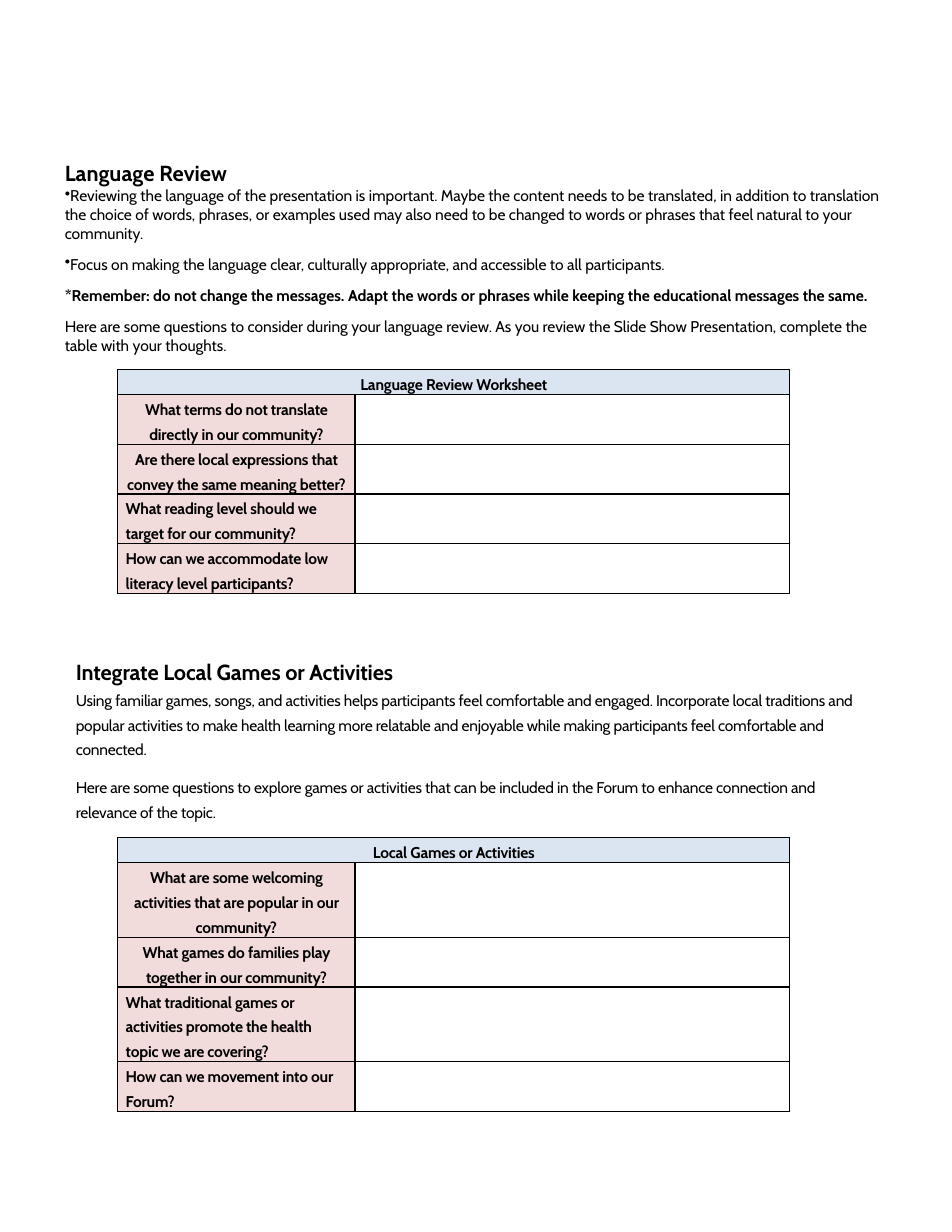
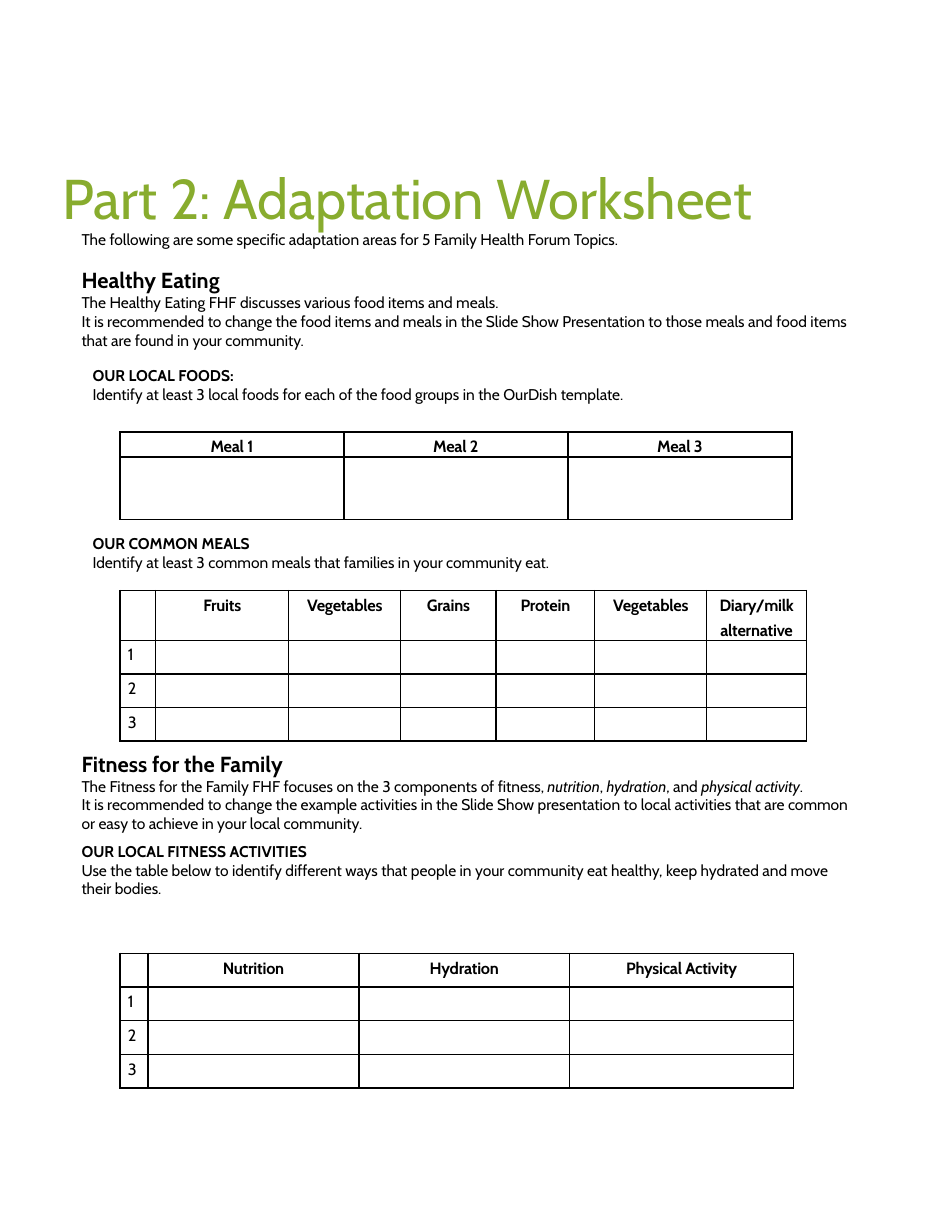
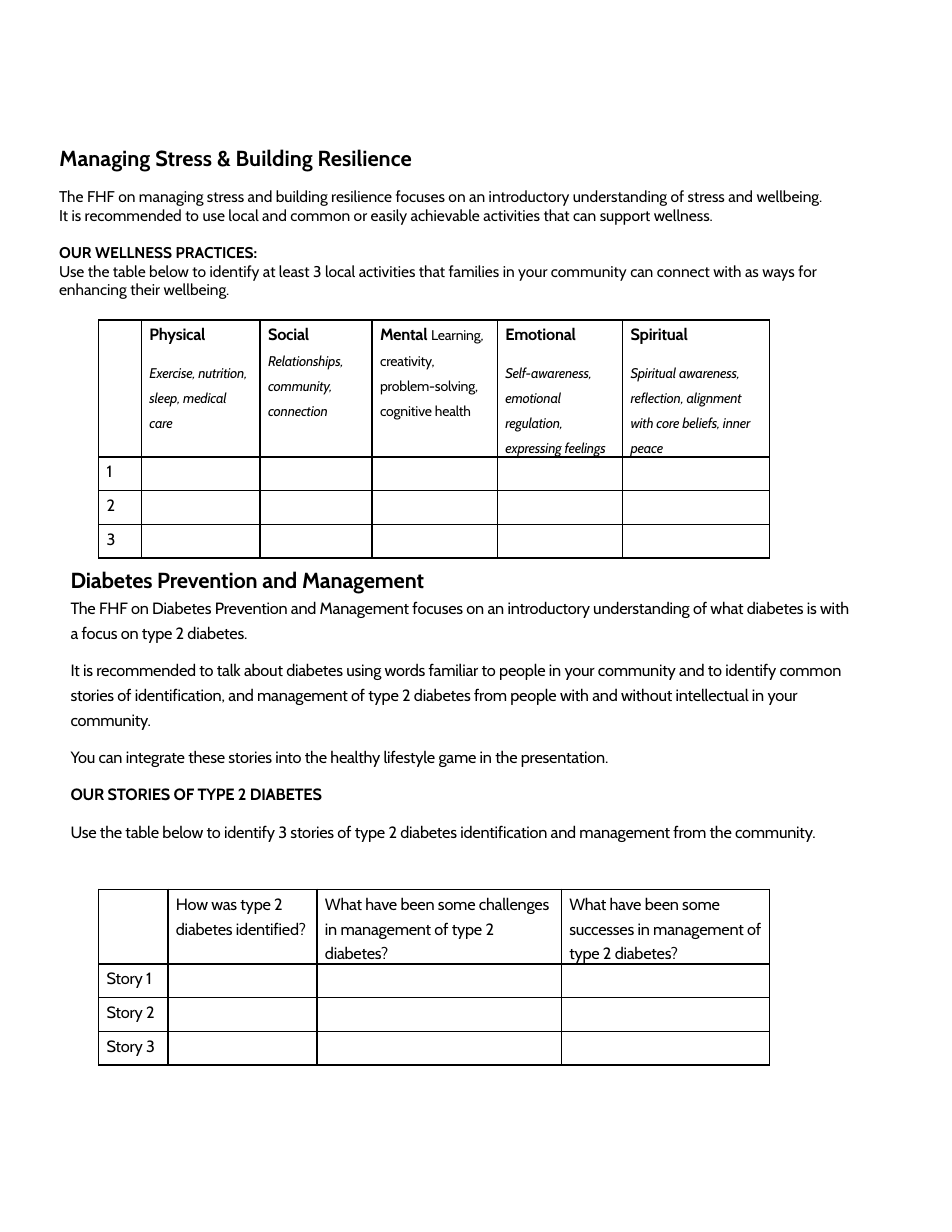
from dataclasses import dataclass

from lxml import etree
from pptx import Presentation
from pptx.dml.color import RGBColor
from pptx.enum.text import MSO_ANCHOR, PP_ALIGN
from pptx.oxml.ns import qn
from pptx.util import Cm, Pt

# Shared look
FONT = "Cabin"
BLACK = RGBColor(0x00, 0x00, 0x00)
GREEN = RGBColor(0x88, 0xAC, 0x2E)
BLUE = RGBColor(0xDB, 0xE5, 0xF1)
PINK = RGBColor(0xF2, 0xDB, 0xDB)
LEFT, CENTER = PP_ALIGN.LEFT, PP_ALIGN.CENTER
TOP, BOTTOM = MSO_ANCHOR.TOP, MSO_ANCHOR.BOTTOM
LINE = Pt(16)
TIGHT = -10  # letter spacing, hundredths of a point
CELL_MARGIN = Cm(0.18)


@dataclass
class Para:
    """Text is a string or a list of (text, style, size); style holds b and i."""
    text: object
    size: float = 10
    style: str = ""
    before: float = 0
    after: float = 0
    align: object = LEFT
    bullet: bool = False
    color: RGBColor = BLACK


def heading(text, before=0):
    return Para(text, 14, "b", before)


# Text
def add_run(p, text, style, size, color, spacing):
    r = p.add_run()
    r.text = text
    font = r.font
    font.name, font.size = FONT, Pt(size)
    font.bold, font.italic = "b" in style, "i" in style
    font.color.rgb = color
    if spacing:
        r._r.get_or_add_rPr().set("spc", str(spacing))


def fill_text(tf, paras, line=None, spacing=0):
    for i, para in enumerate(paras):
        p = tf.add_paragraph() if i else tf.paragraphs[0]
        p.alignment = para.align
        if line:
            p.line_spacing = line
        p.space_before, p.space_after = Pt(para.before), Pt(para.after)
        if para.bullet:
            pPr = p._p.get_or_add_pPr()
            pPr.set("marL", "0")
            pPr.set("indent", "0")
            etree.SubElement(pPr, qn("a:buChar")).set("char", "•")
        runs = para.text
        if isinstance(runs, str):
            runs = [(runs, para.style, para.size)]
        for text, style, size in runs:
            add_run(p, text, style, size, para.color, spacing)


def add_text(s, box, paras, inset=(0.25, 0.13), anchor=TOP, line=None, spacing=0):
    sp = s.shapes.add_textbox(*(Cm(v) for v in box))
    tf = sp.text_frame
    tf.word_wrap = True
    tf.vertical_anchor = anchor
    tf.margin_left = tf.margin_right = Cm(inset[0])
    tf.margin_top = Cm(inset[1])
    tf.margin_bottom = Cm(0.13)
    fill_text(tf, paras, line, spacing)


# Tables
def add_borders(cell):
    tcPr = cell._tc.get_or_add_tcPr()
    for i, side in enumerate(("a:lnL", "a:lnR", "a:lnT", "a:lnB")):
        ln = etree.Element(qn(side), w=str(Pt(1)))
        fill = etree.SubElement(ln, qn("a:solidFill"))
        etree.SubElement(fill, qn("a:srgbClr")).set("val", str(BLACK))
        tcPr.insert(i, ln)


def add_grid(s, left, top, widths, line_counts, rows):
    """Row heights count text lines; cells missing from a row stay empty."""
    heights = [int(LINE * n) for n in line_counts]
    frame = s.shapes.add_table(len(rows), len(widths), Cm(left), Cm(top),
                               Cm(sum(widths)), sum(heights))
    table = frame.table
    table.first_row = table.horz_banding = False
    for column, width in zip(table.columns, widths):
        column.width = Cm(width)
    for i, (row, height) in enumerate(zip(rows, heights)):
        table.rows[i].height = height
        for j in range(len(widths)):
            cell = table.cell(i, j)
            cell.margin_left = cell.margin_right = CELL_MARGIN
            cell.margin_top = cell.margin_bottom = 0
            cell.fill.background()
            add_borders(cell)
            cell.text_frame.paragraphs[0].line_spacing = LINE
            if j < len(row):
                fill_text(cell.text_frame, row[j], LINE, TIGHT)
    return table


def add_worksheet(s, top, title, questions):
    """A blue title row over pink questions with room for answers."""
    rows = [[[Para(title, style="b", align=CENTER)]]]
    rows += [[[Para(text, style="b", align=align)]] for text, _, align in questions]
    counts = [1] + [lines for _, lines, _ in questions]
    table = add_grid(s, 2.67, top, [5.38, 9.86], counts, rows)
    table.cell(0, 0).merge(table.cell(0, 1))
    for i in range(len(rows)):
        fill = table.cell(i, 0).fill
        fill.solid()
        fill.fore_color.rgb = PINK if i else BLUE


def header_cells(labels, style="b", align=CENTER):
    return [[]] + [[Para(label, 10.5, style, align=align)] for label in labels]


def numbered_rows(prefix=""):
    return [[[Para(f"{prefix}{n}", 10.5)]] for n in (1, 2, 3)]


# Slides
def language_slide(s):
    add_text(s, (1.47, 3.05, 18.64, 6.58), [
        heading("Language Review"),
        Para("Reviewing the language of the presentation is important. Maybe the content needs "
             "to be translated, in addition to translation the choice of words, phrases, or "
             "examples used may also need to be changed to words or phrases that feel natural "
             "to your community.", after=8, bullet=True),
        Para("Focus on making the language clear, culturally appropriate, and accessible to "
             "all participants.", after=8, bullet=True),
        Para("*Remember: do not change the messages. Adapt the words or phrases while keeping "
             "the educational messages the same.", style="b", after=8),
        Para("Here are some questions to consider during your language review. As you review "
             "the Slide Show Presentation, complete the table with your thoughts."),
    ], inset=(0, 0.58))
    add_worksheet(s, 8.38, "Language Review Worksheet", [
        ("What terms do not translate directly in our community?", 2, CENTER),
        ("Are there local expressions that convey the same meaning better?", 2, CENTER),
        ("What reading level should we target for our community?", 2, LEFT),
        ("How can we accommodate low literacy level participants?", 2, LEFT),
    ])
    add_text(s, (1.47, 14.83, 18.54, 3.89), [
        heading("Integrate Local Games or Activities"),
        Para("Using familiar games, songs, and activities helps participants feel comfortable "
             "and engaged. Incorporate local traditions and popular activities to make health "
             "learning more relatable and enjoyable while making participants feel comfortable "
             "and connected.", after=8),
        Para("Here are some questions to explore games or activities that can be included in "
             "the Forum to enhance connection and relevance of the topic."),
    ], line=LINE, spacing=TIGHT)
    add_worksheet(s, 19, "Local Games or Activities", [
        ("What are some welcoming activities that are popular in our community?", 3, CENTER),
        ("What games do families play together in our community?", 2, CENTER),
        ("What traditional games or activities promote the health topic we are covering?",
         3, LEFT),
        ("How can we movement into our Forum?", 2, LEFT),
    ])


def adaptation_slide(s):
    add_text(s, (1.17, 3.48, 18.34, 1.91),
             [Para("Part 2: Adaptation Worksheet", 36, color=GREEN)],
             anchor=BOTTOM, line=0.9)

    # Healthy eating
    add_text(s, (1.85, 4.85, 17.65, 3.86), [
        Para("The following are some specific adaptation areas for 5 Family Health Forum "
             "Topics."),
        heading("Healthy Eating", before=12),
        Para("The Healthy Eating FHF discusses various food items and meals."),
        Para("It is recommended to change the food items and meals in the Slide Show "
             "Presentation to those meals and food items that are found in your community."),
    ], inset=(0, 0.36))
    add_text(s, (1.85, 8.18, 17.65, 4.95), [
        Para("OUR LOCAL FOODS:", style="b"),
        Para("Identify at least 3 local foods for each of the food groups in the OurDish "
             "template."),
        Para("OUR COMMON MEALS", style="b", before=84),
        Para("Identify at least 3 common meals that families in your community eat."),
    ])
    meals = header_cells(["Meal 1", "Meal 2", "Meal 3"])[1:]
    add_grid(s, 2.72, 9.8, [5.08] * 3, [1, 2.5], [meals, []])
    foods = ["Fruits", "Vegetables", "Grains", "Protein", "Vegetables",
             "Diary/milk alternative"]
    add_grid(s, 2.72, 13.39, [0.81, 3.02, 2.54, 2.16, 2.24, 2.54, 2.26],
             [2, 1, 1, 1], [header_cells(foods)] + numbered_rows())

    # Fitness
    add_text(s, (1.85, 16.46, 17.65, 4.93), [
        heading("Fitness for the Family"),
        Para([("The Fitness for the Family FHF focuses on the 3 components of fitness, ", "", 10),
              ("nutrition", "i", 10), (", ", "", 10), ("hydration", "i", 10),
              (", and ", "", 10), ("physical activity", "i", 10), (".", "", 10)]),
        Para("It is recommended to change the example activities in the Slide Show "
             "presentation to local activities that are common or easy to achieve in your "
             "local community."),
        Para("OUR LOCAL FITNESS ACTIVITIES", style="b", before=6),
        Para("Use the table below to identify different ways that people in your community "
             "eat healthy, keep hydrated and move their bodies."),
    ], inset=(0, 0.56))
    add_grid(s, 2.72, 21.62, [0.64, 4.78, 4.78, 5.08], [1] * 4,
             [header_cells(["Nutrition", "Hydration", "Physical Activity"])] + numbered_rows())


def wellness_slide(s):
    # Stress and resilience
    add_text(s, (1.35, 2.92, 18.21, 1.73),
             [heading("Managing Stress & Building Resilience")], inset=(0, 0.36))
    add_text(s, (1.09, 3.45, 18.75, 4.45), [
        Para("The FHF on managing stress and building resilience focuses on an introductory "
             "understanding of stress and wellbeing."),
        Para("It is recommended to use local and common or easily achievable activities that "
             "can support wellness."),
        Para("OUR WELLNESS PRACTICES:", style="b", before=12),
        Para("Use the table below to identify at least 3 local activities that families in "
             "your community can connect with as ways for enhancing their wellbeing."),
    ], inset=(0.25, 0.79))

    def stacked(name, examples):
        return [Para(name, 10.5, "b", after=8), Para(examples, 9, "i")]

    def inline(name, examples, style):
        return [Para([(name + " ", "b", 10.5), (examples, style, 9)])]

    areas = [
        [],
        stacked("Physical", "Exercise, nutrition, sleep, medical care"),
        inline("Social", "Relationships, community, connection", "i"),
        inline("Mental", "Learning, creativity, problem-solving, cognitive health", ""),
        stacked("Emotional", "Self-awareness, emotional regulation, expressing feelings"),
        stacked("Spiritual", "Spiritual awareness, reflection, alignment with core beliefs, "
                             "inner peace"),
    ]
    add_grid(s, 2.24, 7.26, [0.97, 2.69, 2.54, 2.84, 2.84, 3.33],
             [5.5, 1, 1, 1], [areas] + numbered_rows())

    # Diabetes
    add_text(s, (1.35, 12.75, 18.21, 7.04), [
        heading("Diabetes Prevention and Management"),
        Para("The FHF on Diabetes Prevention and Management focuses on an introductory "
             "understanding of what diabetes is with a focus on type 2 diabetes.",
             10.5, after=8),
        Para("It is recommended to talk about diabetes using words familiar to people in your "
             "community and to identify common stories of identification, and management of "
             "type 2 diabetes from people with and without intellectual in your community.",
             10.5, after=8),
        Para("You can integrate these stories into the healthy lifestyle game in the "
             "presentation.", 10.5, after=8),
        Para("OUR STORIES OF TYPE 2 DIABETES", 10.5, "b", after=8),
        Para("Use the table below to identify 3 stories of type 2 diabetes identification and "
             "management from the community.", 10.5),
    ], line=LINE, spacing=TIGHT)
    questions = ["How was type 2 diabetes identified?",
                 "What have been some challenges in management of type 2 diabetes?",
                 "What have been some successes in management of type 2 diabetes?"]
    add_grid(s, 2.24, 20.17, [1.57, 3.38, 5.54, 4.72], [3, 1, 1, 1],
             [header_cells(questions, "", LEFT)] + numbered_rows("Story "))


def main():
    prs = Presentation()
    prs.slide_width, prs.slide_height = Cm(21.59), Cm(27.94)
    blank = prs.slide_layouts[6]
    for build in (language_slide, adaptation_slide, wellness_slide):
        build(prs.slides.add_slide(blank))
    prs.save("out.pptx")


if __name__ == "__main__":
    main()
